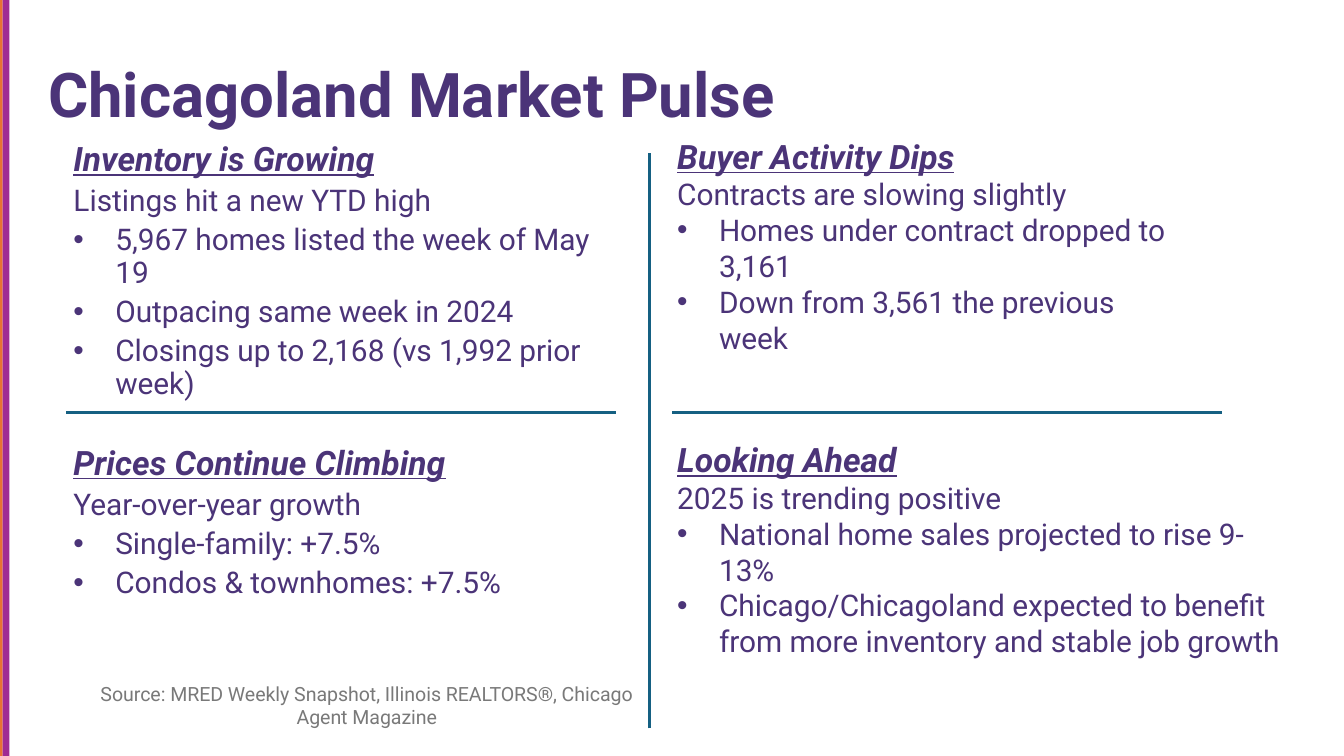
from lxml.etree import SubElement
from pptx import Presentation
from pptx.dml.color import RGBColor
from pptx.enum.shapes import MSO_CONNECTOR, MSO_SHAPE
from pptx.enum.text import MSO_ANCHOR, PP_ALIGN
from pptx.oxml.ns import qn
from pptx.util import Cm, Pt

COLORS = {
    "orange": "E97132",
    "magenta": "A02B93",
    "purple": "4B3478",
    "gray": "797979",
    "teal": "156082",
}
FONT = "Roboto"
TEXT_INDENT = Cm(0.48)
BULLET_INDENT = Cm(1.27)
BULLET_HANG = Cm(0.79)

LEFT_COLUMN, RIGHT_COLUMN = 0.66, 12.07
SECTIONS = [
    (LEFT_COLUMN, 2.57, 10.97, 5.2, 0.9, 3.8,
     "Inventory is Growing", "Listings hit a new YTD high",
     ["5,967 homes listed the week of May 19",
      "Outpacing same week in 2024",
      "Closings up to 2,168 (vs 1,992 prior week)"]),
    (LEFT_COLUMN, 8.31, 10.97, 4.1, 0.9, 3.8,
     "Prices Continue Climbing", "Year-over-year growth",
     ["Single-family: +7.5%", "Condos & townhomes: +7.5%"]),
    (RIGHT_COLUMN, 2.44, 10.67, 5.2, 1, 0,
     "Buyer Activity Dips", "Contracts are slowing slightly",
     ["Homes under contract dropped to 3,161",
      "Down from 3,561 the previous week"]),
    (RIGHT_COLUMN, 8.18, 12.73, 4.45, 1, 0,
     "Looking Ahead", "2025 is trending positive",
     ["National home sales projected to rise 9-13%",
      "Chicago/Chicagoland expected to benefit from more inventory "
      "and stable job growth"]),
]


class SlideBuilder:
    def __init__(self, slide):
        self.slide = slide

    def color(self, name):
        return RGBColor.from_string(COLORS[name])

    def bar(self, left, color):
        shape = self.slide.shapes.add_shape(
            MSO_SHAPE.RECTANGLE, Cm(left), 0, Cm(0.13), Cm(14.94))
        shape.shadow.inherit = False
        shape.fill.solid()
        shape.fill.fore_color.rgb = self.color(color)
        shape.line.fill.background()

    def rule(self, start_x, start_y, end_x, end_y):
        connector = self.slide.shapes.add_connector(
            MSO_CONNECTOR.STRAIGHT,
            Cm(start_x), Cm(start_y), Cm(end_x), Cm(end_y))
        connector.line.color.rgb = self.color("teal")
        connector.line.width = Pt(1.5)
        SubElement(connector._element.spPr, qn("a:effectLst"))

    def frame(self, left, top, width, height, anchor=MSO_ANCHOR.TOP):
        shape = self.slide.shapes.add_textbox(
            Cm(left), Cm(top), Cm(width), Cm(height))
        shape.text_frame.word_wrap = True
        shape.text_frame.vertical_anchor = anchor
        return shape.text_frame

    def format_runs(self, paragraph, size, color="purple", bold=False, heading=False):
        for run in paragraph.runs:
            run.font.name = FONT
            run.font.size = Pt(size)
            run.font.color.rgb = self.color(color)
            run.font.bold = bold or heading
            run.font.italic = heading
            run.font.underline = heading

    def label(self, text, box, size, color="purple", bold=False,
              align=PP_ALIGN.LEFT, line_spacing=1):
        text_frame = self.frame(*box, anchor=MSO_ANCHOR.MIDDLE)
        text_frame.text = text
        paragraph = text_frame.paragraphs[0]
        paragraph.alignment = align
        paragraph.line_spacing = line_spacing
        self.format_runs(paragraph, size, color, bold)

    def indent(self, paragraph, bulleted):
        properties = paragraph._p.get_or_add_pPr()
        properties.set("marL", str(BULLET_INDENT if bulleted else TEXT_INDENT))
        properties.set("indent", str(-BULLET_HANG if bulleted else 0))
        if bulleted:
            SubElement(properties, qn("a:buFont"), typeface="Arial")
            SubElement(properties, qn("a:buChar"), char="•")

    def section(self, left, top, width, height, line_spacing, gap,
                heading, summary, points):
        text_frame = self.frame(left, top, width, height)
        text_frame.text = "\n".join([heading, summary, *points])
        for index, paragraph in enumerate(text_frame.paragraphs):
            self.indent(paragraph, bulleted=index > 1)
            paragraph.line_spacing = line_spacing
            if index and gap:
                paragraph.space_before = Pt(gap)
            is_heading = index == 0
            self.format_runs(paragraph, 18 if is_heading else 16, heading=is_heading)


def main():
    presentation = Presentation()
    presentation.slide_width = Cm(25.4)
    presentation.slide_height = Cm(14.29)
    slide = presentation.slides.add_slide(presentation.slide_layouts[6])
    builder = SlideBuilder(slide)

    builder.bar(-0.08, "orange")
    builder.bar(0.05, "magenta")
    builder.label("Chicagoland Market Pulse", (0.66, 0.46, 23.22, 2.77), 33,
                  bold=True, line_spacing=0.9)
    for section in SECTIONS:
        builder.section(*section)
    builder.label(
        "Source: MRED Weekly Snapshot, Illinois REALTORS®, Chicago Agent Magazine",
        (1.6, 12.95, 10.67, 0.76), 10.5, color="gray", align=PP_ALIGN.CENTER)
    for left in (1.25, 12.7):
        builder.rule(left, 7.8, left + 10.39, 7.8)
    builder.rule(12.27, 13.77, 12.27, 2.9)

    presentation.save("out.pptx")


if __name__ == "__main__":
    main()
